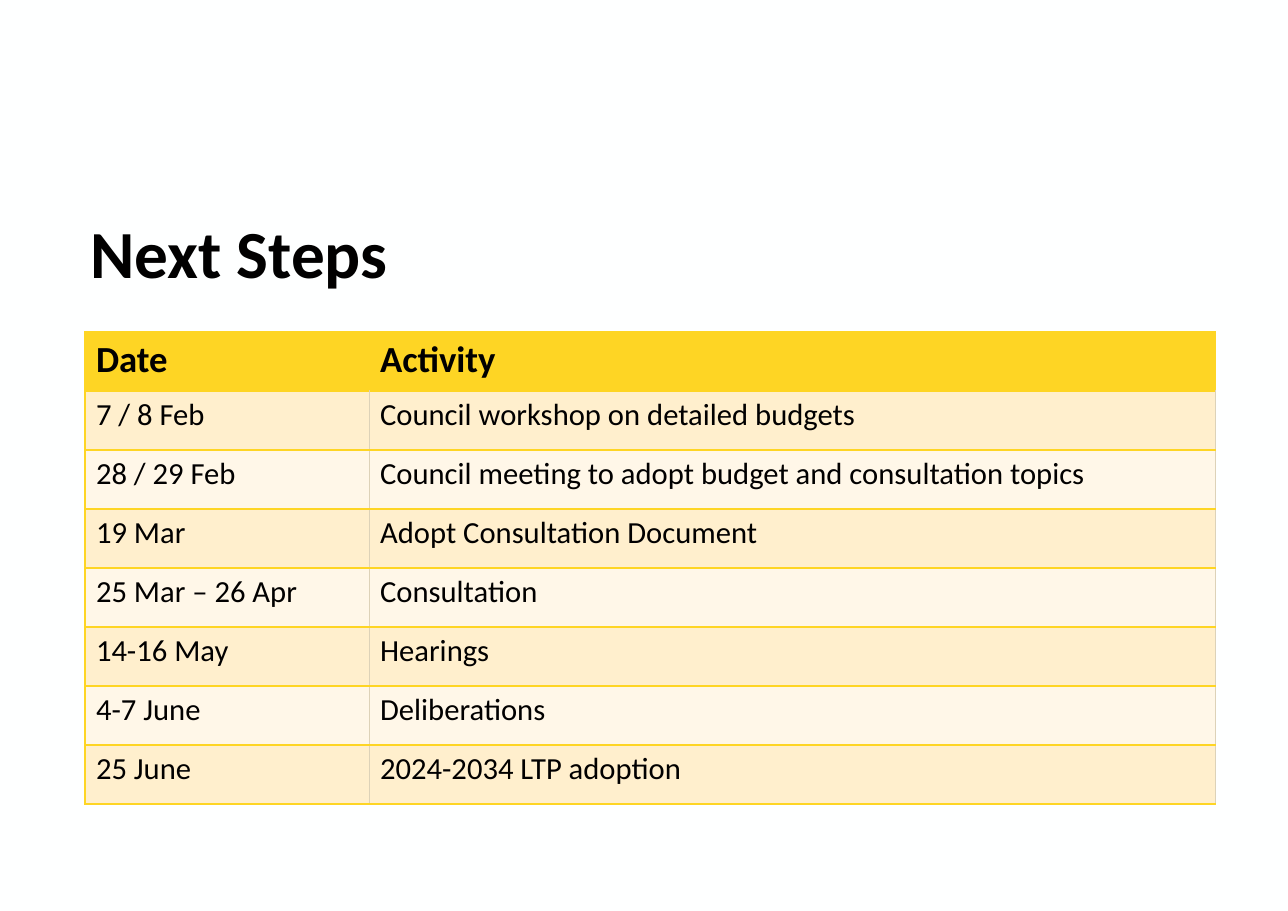
from pptx import Presentation
from pptx.dml.color import RGBColor
from pptx.enum.text import MSO_ANCHOR
from pptx.oxml.ns import qn
from pptx.util import Cm, Pt
from lxml.etree import SubElement

BACKGROUND = RGBColor(0xFE, 0xFF, 0xFF)
INK = RGBColor(0x01, 0x00, 0x00)
YELLOW = RGBColor(0xFE, 0xD5, 0x24)
CREAM = RGBColor(0xFF, 0xEF, 0xCD)
PALE_CREAM = RGBColor(0xFF, 0xF7, 0xE8)
DIVIDER = RGBColor(0xDD, 0xD2, 0xB8)
FONT = "Calibri"

STEPS = [
    ("Date", "Activity"),
    ("7 / 8 Feb", "Council workshop on detailed budgets"),
    ("28 / 29 Feb", "Council meeting to adopt budget and consultation topics"),
    ("19 Mar", "Adopt Consultation Document"),
    ("25 Mar – 26 Apr", "Consultation"),
    ("14-16 May", "Hearings"),
    ("4-7 June", "Deliberations"),
    ("25 June", "2024-2034 LTP adoption"),
]
COLUMN_WIDTHS = [Cm(6.55), Cm(19.52)]
ROW_HEIGHT = Cm(1.36)


def write_text(text_frame, text, size=20, bold=False, line_spacing=None):
    paragraph = text_frame.paragraphs[0]
    paragraph.line_spacing = line_spacing
    run = paragraph.add_run()
    run.text = text
    run.font.name = FONT
    run.font.size = Pt(size)
    run.font.bold = bold
    run.font.color.rgb = INK


def add_title(slide, text):
    shape = slide.shapes.add_textbox(Cm(1.83), Cm(2.46), Cm(12.9), Cm(4.42))
    shape.text_frame.word_wrap = True
    shape.text_frame.vertical_anchor = MSO_ANCHOR.BOTTOM
    write_text(shape.text_frame, text, size=44, bold=True, line_spacing=0.9)


def add_border(cell, side, color, width):
    properties = cell._tc.get_or_add_tcPr()
    line = SubElement(properties, qn(f"a:{side}"), w=str(Pt(width)))
    fill = SubElement(line, qn("a:solidFill"))
    SubElement(fill, qn("a:srgbClr"), val=str(color))


def format_cell(cell, row, column):
    header = row == 0
    inner = (YELLOW, 1) if header else (DIVIDER, 0.5)
    add_border(cell, "lnL", *((YELLOW, 1) if column == 0 else inner))
    add_border(cell, "lnR", *inner)
    add_border(cell, "lnT", YELLOW, 1)
    add_border(cell, "lnB", YELLOW, 1)
    cell.fill.solid()
    band = CREAM if row % 2 else PALE_CREAM
    cell.fill.fore_color.rgb = YELLOW if header else band


def add_steps_table(slide, steps):
    frame = slide.shapes.add_table(
        len(steps), len(COLUMN_WIDTHS), Cm(1.96), Cm(7.65),
        sum(COLUMN_WIDTHS), ROW_HEIGHT * len(steps),
    )
    table = frame.table
    table.horz_banding = False
    for column, width in zip(table.columns, COLUMN_WIDTHS):
        column.width = width
    for row, texts in enumerate(steps):
        table.rows[row].height = ROW_HEIGHT
        for column, text in enumerate(texts):
            cell = table.cell(row, column)
            format_cell(cell, row, column)
            header = row == 0
            write_text(cell.text_frame, text, size=24 if header else 20, bold=header)


def main():
    presentation = Presentation()
    presentation.slide_width = Cm(29.7)
    presentation.slide_height = Cm(21)
    slide = presentation.slides.add_slide(presentation.slide_layouts[6])
    slide.background.fill.solid()
    slide.background.fill.fore_color.rgb = BACKGROUND
    add_title(slide, "Next Steps")
    add_steps_table(slide, STEPS)
    presentation.save("out.pptx")


if __name__ == "__main__":
    main()
